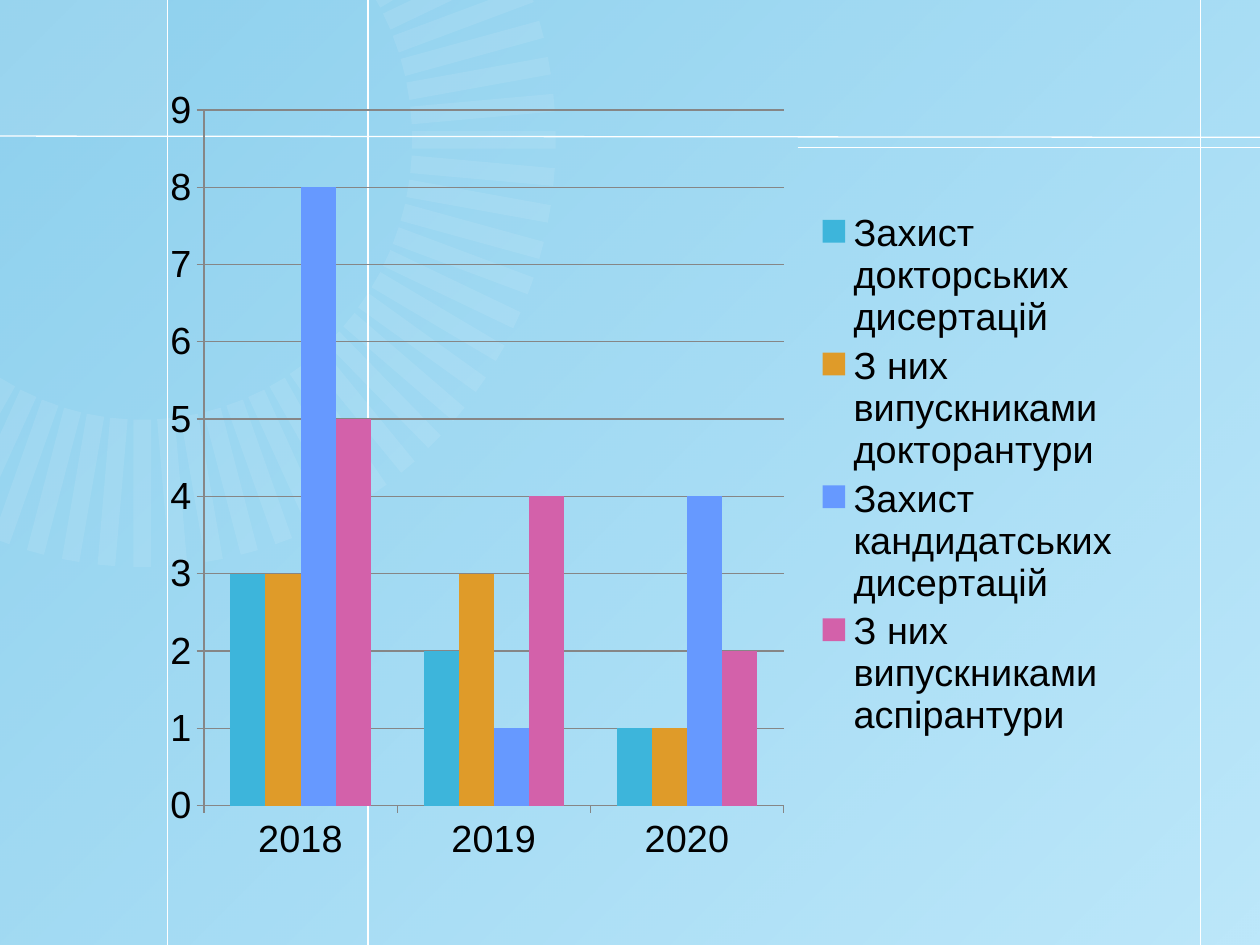
import math
from lxml import etree
from pptx import Presentation, util as u
from pptx.chart import data as cd
from pptx.dml import color as dc
from pptx.enum import chart as ch, shapes as sh
from pptx.oxml import ns

WIDE, HIGH = 10, 7.5
HUES = {
    "base": "BCE7FA", "deep": "0F92CC", "white": "FFFFFF", "ray": "F2FAFE",
    "text": "000000", "grid": "868686",
    "teal": "3DB5DB", "gold": "DF9B29", "blue": "6699FF", "pink": "D361AA",
}
YEARS = ["2018", "2019", "2020"]
SERIES = [
    ("Захист докторських дисертацій", (3, 2, 1), "teal"),
    ("З них випускниками докторантури", (3, 3, 1), "gold"),
    ("Захист кандидатських дисертацій", (8, 1, 4), "blue"),
    ("З них випускниками аспірантури", (5, 4, 2), "pink"),
]


def rgb(name):
    return dc.RGBColor.from_string(HUES[name])


def fade(node, share):
    for tint in node.iter(ns.qn("a:srgbClr")):
        etree.SubElement(tint, ns.qn("a:alpha")).set("val", str(share * 1000))


def paint(shape, name, share):
    shape.shadow.inherit = False
    shape.fill.solid()
    shape.fill.fore_color.rgb = rgb(name)
    shape.line.fill.background()
    fade(shape.fill._xPr.find(ns.qn("a:solidFill")), share)


def style(font, size=21.6, name="Arial", hue="text"):
    font.size = u.Pt(size)
    font.name = name
    font.color.rgb = rgb(hue)


def panel(slide, box):
    return slide.shapes.add_shape(sh.MSO_SHAPE.RECTANGLE, *map(u.Inches, box))


def wash(slide, box):
    fill = slide.background.fill
    fill.solid()
    fill.fore_color.rgb = rgb("base")
    sheet = panel(slide, box)
    sheet.shadow.inherit = False
    sheet.line.fill.background()
    sheet.fill.gradient()
    sheet.fill.gradient_angle = 315
    for stop, place, share in zip(sheet.fill.gradient_stops, (0, 1), (27, 0)):
        stop.position = place
        stop.color.rgb = rgb("deep")
        fade(stop._gs, share)


def rules(slide, box):
    left, top, wide, high = box
    cols, row = (1.33, 9.53, 2.92), 1.08
    paint(panel(slide, (left, top, cols[0], row)), "white", 10)
    ends = [(x, top, x, top + high) for x in cols]
    ends += [(left, row, left + wide, row + 0.01), (6.33, 1.17, left + wide, 1.17)]
    for end in ends:
        line = slide.shapes.add_connector(sh.MSO_CONNECTOR.STRAIGHT, *map(u.Inches, end))
        line.line.color.rgb = rgb("white")
        line.line.width = u.Pt(0.75)
        etree.SubElement(line._element.spPr, ns.qn("a:effectLst"))


def trim(points, axis):
    kept = []
    for old, new in zip(points[-1:] + points[:-1], points):
        if (old[axis] < 0) != (new[axis] < 0):
            part = old[axis] / (old[axis] - new[axis])
            kept.append(tuple(a + part * (b - a) for a, b in zip(old, new)))
        if new[axis] >= 0:
            kept.append(new)
    return kept


def burst(slide, mid, inner, outer, half):
    group = slide.shapes.add_group_shape()
    for turn in range(-30, 121, 5):
        angle = math.radians(turn)
        cos, sin = math.cos(angle), math.sin(angle)
        points = [
            (mid[0] + rx * cos - side * half * sin, mid[1] + ry * sin + side * half * cos)
            for (rx, ry), side in ((inner, -1), (outer, -1), (outer, 1), (inner, 1))
        ]
        if not -20 <= turn <= 110:
            points = trim(trim(points, 0), 1)
        dots = [(u.Inches(x), u.Inches(y)) for x, y in points]
        path = group.shapes.build_freeform(*dots[0])
        path.add_line_segments(dots[1:], close=True)
        paint(path.convert_to_shape(), "ray", 10)


def place(node, index, box, inner=False):
    for old in node.findall(ns.qn("c:layout")):
        node.remove(old)
    layout = etree.Element(ns.qn("c:layout"))
    manual = etree.SubElement(layout, ns.qn("c:manualLayout"))
    items = [("layoutTarget", "inner")] if inner else []
    items += [("xMode", "edge"), ("yMode", "edge"), *zip("xywh", box)]
    for tag, value in items:
        etree.SubElement(manual, ns.qn("c:" + tag)).set("val", str(value))
    node.insert(index, layout)


def graph(slide, box):
    data = cd.CategoryChartData()
    data.categories = YEARS
    for name, values, _ in SERIES:
        data.add_series(name, values)
    kind = ch.XL_CHART_TYPE.COLUMN_CLUSTERED
    chart = slide.shapes.add_chart(kind, *map(u.Inches, box), data).chart
    style(chart.font)
    chart.has_title = False
    plot = chart.plots[0]
    plot.vary_by_categories = False
    plot.gap_width, plot.overlap = 150, 0
    for series, (_, _, hue) in zip(plot.series, SERIES):
        series.format.fill.solid()
        series.format.fill.fore_color.rgb = rgb(hue)
    axis = chart.value_axis
    axis.minimum_scale, axis.maximum_scale, axis.major_unit = 0, 9, 1
    axis.has_major_gridlines = True
    chart.category_axis.has_major_gridlines = False
    for scale in (axis, chart.category_axis):
        scale.major_tick_mark = ch.XL_TICK_MARK.OUTSIDE
        style(scale.tick_labels.font)
    for part in (axis, chart.category_axis, axis.major_gridlines):
        part.format.line.color.rgb = rgb("grid")
        part.format.line.width = u.Pt(0.75)
    chart.has_legend = True
    chart.legend.position = ch.XL_LEGEND_POSITION.RIGHT
    chart.legend.include_in_layout = False
    style(chart.legend.font)
    area = chart._chartSpace.chart.plotArea
    place(area, 0, (0.054, 0.046, 0.593, 0.866), inner=True)
    place(chart.legend._element, 1, (0.67, 0.165, 0.33, 0.67))


def main():
    deck = Presentation()
    deck.slide_width, deck.slide_height = u.Inches(WIDE), u.Inches(HIGH)
    slide = deck.slides.add_slide(deck.slide_layouts[6])
    page = (0, 0, WIDE, HIGH)
    wash(slide, page)
    rules(slide, page)
    burst(slide, (1.13, 1.11), (2.14, 2.22), (3.28, 3.39), 0.07)
    graph(slide, (0.12 * WIDE, 0.08 * HIGH - 0.02, 7.76, 0.85 * HIGH))
    deck.save("out.pptx")


if __name__ == "__main__":
    main()
